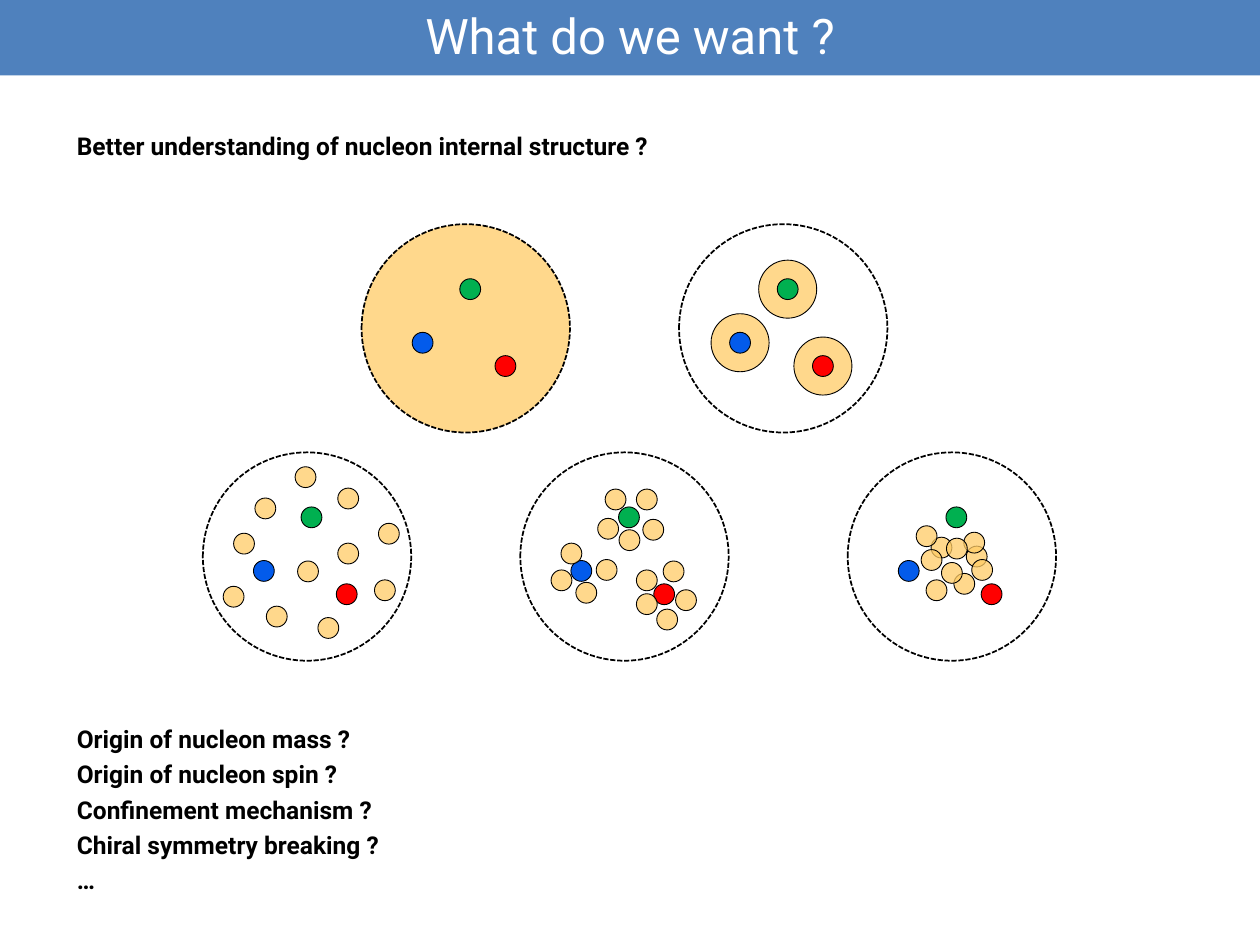
import pptx
import pptx.dml.color
import pptx.enum.dml
import pptx.enum.shapes
import pptx.enum.text
import pptx.oxml.xmlchemy
import pptx.util
from lxml import etree

Cm, Pt = pptx.util.Cm, pptx.util.Pt
SHAPE = pptx.enum.shapes.MSO_SHAPE
FONT = "Roboto"
BLACK, WHITE, SEA = "000000", "FFFFFF", "FFCC66"
NUCLEON, DOT, HALO = 4.2, 0.42, 1.17
QUARKS = [("035BEB", 1.23, 2.39), ("FF0000", 2.9, 2.86), ("00B050", 2.19, 1.31)]

SPREAD = [(2.93, 2.04), (2.53, 3.54), (1.26, 1.13), (2.12, 2.4), (2.93, 0.93), (1.49, 3.31),
          (0.83, 1.84), (3.67, 2.78), (0.62, 2.91), (2.07, 0.5), (3.75, 1.64)]
AROUND_QUARKS = [(2.55, 0.95), (2.68, 1.56), (1.92, 0.95), (1.77, 1.54), (1.03, 2.04),
                 (0.83, 2.58), (1.33, 2.83), (1.74, 2.37), (2.2, 1.77), (2.55, 2.58),
                 (2.55, 3.06), (3.09, 2.4), (3.34, 2.98), (2.96, 3.37)]
CORE = [(1.89, 1.92), (2.35, 2.65), (2.6, 2.1), (2.55, 1.82), (1.69, 2.17), (2.71, 2.37),
        (1.59, 1.69), (1.79, 2.78), (2.1, 2.43), (2.2, 1.94)]


def rgb(color):
    """Turn a hex string into a colour."""
    return pptx.dml.color.RGBColor.from_string(color)


def paint(sp, color):
    """Fill a shape, making the sea colour 75% opaque."""
    sp.shadow.inherit = False
    sp.fill.solid()
    sp.fill.fore_color.rgb = rgb(color)
    if color == SEA:
        clr = sp.element.spPr.find(".//" + pptx.oxml.ns.qn("a:srgbClr"))
        etree.SubElement(clr, pptx.oxml.ns.qn("a:alpha"), val="75000")


def format_text(p, size, color, bold=False):
    """Format all runs of a paragraph."""
    for r in p.runs:
        r.font.name, r.font.size, r.font.bold = FONT, Pt(size), bold
        r.font.color.rgb = rgb(color)


def add_circle(grp, cx, cy, size, color, width=0.5):
    """Add an outlined circle centred on a point in cm."""
    sp = grp.shapes.add_shape(SHAPE.OVAL, Cm(cx - size / 2), Cm(cy - size / 2), Cm(size), Cm(size))
    paint(sp, color)
    sp.line.color.rgb = rgb(BLACK)
    sp.line.width = Pt(width)
    return sp


def add_nucleon(s, left, top, fill=WHITE, sea=(), halos=False):
    """Add a nucleon with three quarks and its sea as one group."""
    grp = s.shapes.add_group_shape()
    edge = add_circle(grp, left + NUCLEON / 2, top + NUCLEON / 2, NUCLEON, fill, 1)
    edge.line.dash_style = pptx.enum.dml.MSO_LINE.SQUARE_DOT
    edge.line.fill.fore_color.rgb = rgb(BLACK)
    if halos:
        for _, x, y in QUARKS:
            add_circle(grp, left + x, top + y, HALO, SEA)
    for color, x, y in QUARKS:
        add_circle(grp, left + x, top + y, DOT, color)
    for x, y in sea:
        add_circle(grp, left + x, top + y, DOT, SEA)


def add_header(s, width, height, text):
    """Place the title on a blue bar across the slide."""
    title = s.shapes.title
    title.left, title.top, title.width, title.height = 0, 0, Cm(width), Cm(height - 0.12)
    tf = title.text_frame
    tf.text = text
    tf.auto_size = pptx.enum.text.MSO_AUTO_SIZE.NONE
    tf.vertical_anchor = pptx.enum.text.MSO_ANCHOR.MIDDLE
    tf.paragraphs[0].alignment = pptx.enum.text.PP_ALIGN.CENTER
    format_text(tf.paragraphs[0], 28, WHITE)
    bar = s.shapes.add_shape(SHAPE.RECTANGLE, 0, 0, Cm(width), Cm(height))
    paint(bar, "4F81BD")
    bar.line.fill.background()
    title.element.addprevious(bar.element)


def add_questions(s, left, top, width, height, lines):
    """Add a text box with one bold question per paragraph."""
    tf = s.shapes.add_textbox(Cm(left), Cm(top), Cm(width), Cm(height)).text_frame
    tf.word_wrap = True
    tf.text = "\n".join(lines)
    for i, p in enumerate(tf.paragraphs):
        p.space_before = Pt(3.2 if i else 0)
        format_text(p, 14, BLACK, True)


def main():
    """Build the slide and save it."""
    prs = pptx.Presentation()
    prs.slide_width, prs.slide_height = Cm(25.4), Cm(19.05)
    s = prs.slides.add_slide(prs.slide_layouts[5])
    add_header(s, 25.4, 1.52, "What do we want ?")
    add_nucleon(s, 7.29, 4.52, fill=SEA)
    add_nucleon(s, 13.69, 4.52, halos=True)
    for left, sea in [(4.09, SPREAD), (10.49, AROUND_QUARKS), (17.09, CORE)]:
        add_nucleon(s, left, 9.12, sea=sea)
    add_questions(s, 1.3, 2.51, 20.37, 0.84,
                  ["Better understanding of nucleon internal structure ?"])
    add_questions(s, 1.3, 14.48, 20.37, 3.7,
                  ["Origin of nucleon mass ?", "Origin of nucleon spin ?",
                   "Confinement mechanism ?", "Chiral symmetry breaking ?", "…"])
    prs.save("out.pptx")


if __name__ == "__main__":
    main()
